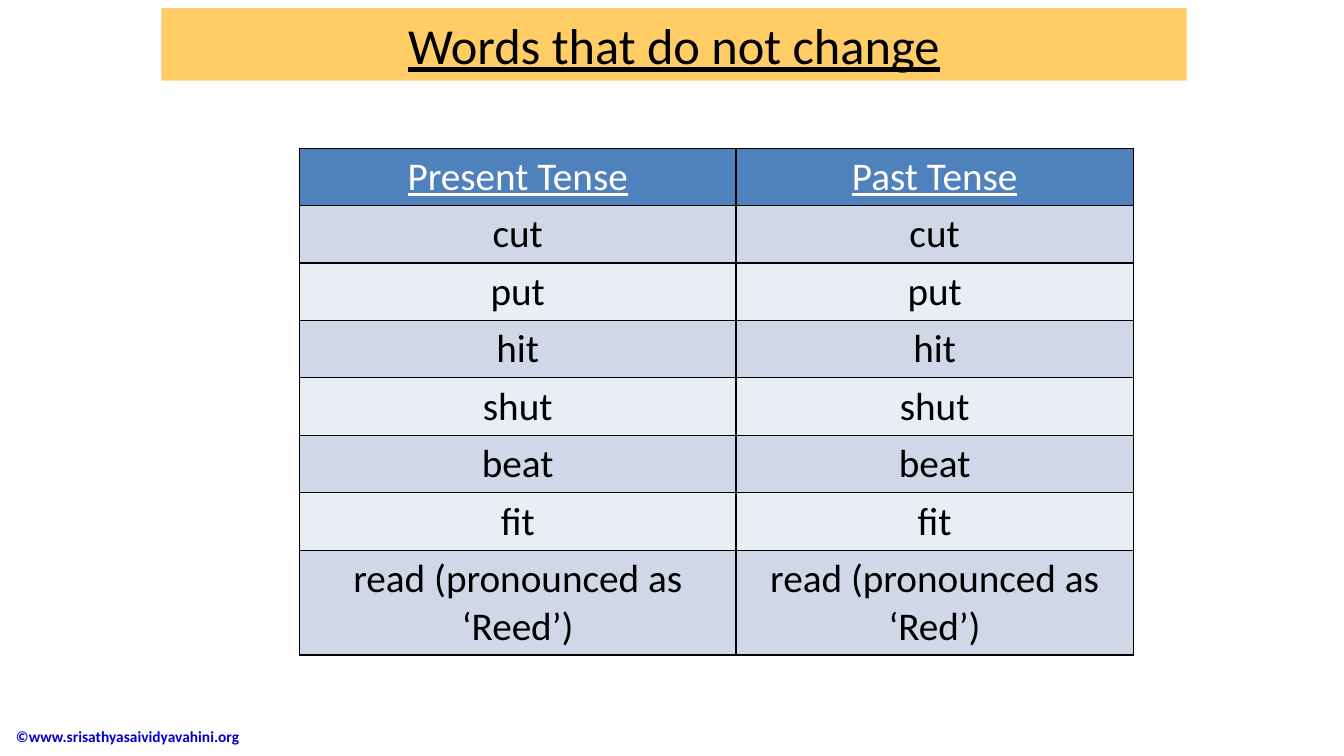
from dataclasses import dataclass

from lxml import etree
from pptx import Presentation
from pptx import util as u
from pptx.dml.color import RGBColor
from pptx.enum import text
from pptx.oxml.ns import qn

WIDE, HIGH = u.Inches(13.33), u.Inches(7.5)


@dataclass(frozen=True)
class Theme:
    font: str = "Calibri"
    black: str = "000000"
    white: str = "FFFFFF"
    gold: str = "FFCC66"
    head: str = "4F81BD"
    bands: tuple = ("E9EDF4", "D0D8E8")
    link: str = "0000CC"
    title: int = 36
    body: int = 28
    small: int = 11
    rule: int = 1


THEME = Theme()
WORDS = ["cut", "put", "hit", "shut", "beat", "fit"]
ROWS = [
    ("Present Tense", "Past Tense"),
    *((word, word) for word in WORDS),
    ("read (pronounced as ‘Reed’)", "read (pronounced as ‘Red’)"),
]
COLS = (32.48, 29.56)
ROW, LAST = 7.6, 13.87


def across(share):
    return int(WIDE * share / 100)


def down(share):
    return int(HIGH * share / 100)


def area(left, top, width, height):
    return across(left), down(top), across(width), down(height)


def paint(shape, color):
    shape.fill.solid()
    shape.fill.fore_color.rgb = RGBColor.from_string(color)


def write(frame, words, size, color, align, bold=False, under=False):
    frame.word_wrap = True
    para = frame.paragraphs[0]
    para.text = words
    para.alignment = align
    font = para.font
    font.name, font.size = THEME.font, u.Pt(size)
    font.bold, font.underline = bold, under
    font.color.rgb = RGBColor.from_string(color)


def edge(cell):
    props = cell._tc.get_or_add_tcPr()
    for side in ("lnL", "lnR", "lnT", "lnB"):
        line = etree.SubElement(props, qn(f"a:{side}"), w=str(u.Pt(THEME.rule)))
        fill = etree.SubElement(line, qn("a:solidFill"))
        etree.SubElement(fill, qn("a:srgbClr"), val=THEME.black)


def add_title(slide, words, box):
    title = slide.shapes.title
    title.left, title.top, title.width, title.height = box
    paint(title, THEME.gold)
    frame = title.text_frame
    frame.vertical_anchor = text.MSO_ANCHOR.MIDDLE
    write(frame, words, THEME.title, THEME.black, text.PP_ALIGN.CENTER, under=True)


def add_grid(slide, rows, left, top):
    tall = [ROW] * (len(rows) - 1) + [LAST]
    box = area(left, top, sum(COLS), sum(tall))
    table = slide.shapes.add_table(len(rows), len(COLS), *box).table
    for col, share in zip(table.columns, COLS):
        col.width = across(share)
    for i, (row, share, words) in enumerate(zip(table.rows, tall, rows)):
        row.height = down(share)
        head = i == 0
        for cell, word in zip(row.cells, words):
            edge(cell)
            paint(cell, THEME.head if head else THEME.bands[i % 2])
            color = THEME.white if head else THEME.black
            write(cell.text_frame, word, THEME.body, color,
                  text.PP_ALIGN.CENTER, under=head)


def add_credit(slide, words, box):
    frame = slide.shapes.add_textbox(*box).text_frame
    frame.vertical_anchor = text.MSO_ANCHOR.MIDDLE
    write(frame, words, THEME.small, THEME.link, text.PP_ALIGN.LEFT, bold=True)


def main():
    deck = Presentation()
    deck.slide_width, deck.slide_height = WIDE, HIGH
    slide = deck.slides.add_slide(deck.slide_layouts.get_by_name("Title Only"))
    add_credit(slide, "©www.srisathyasaividyavahini.org", area(0.45, 94.8, 26.25, 5.2))
    add_title(slide, "Words that do not change", area(12, 1.07, 76.3, 9.6))
    add_grid(slide, ROWS, 22.28, 19.6)
    deck.save("out.pptx")


if __name__ == "__main__":
    main()
